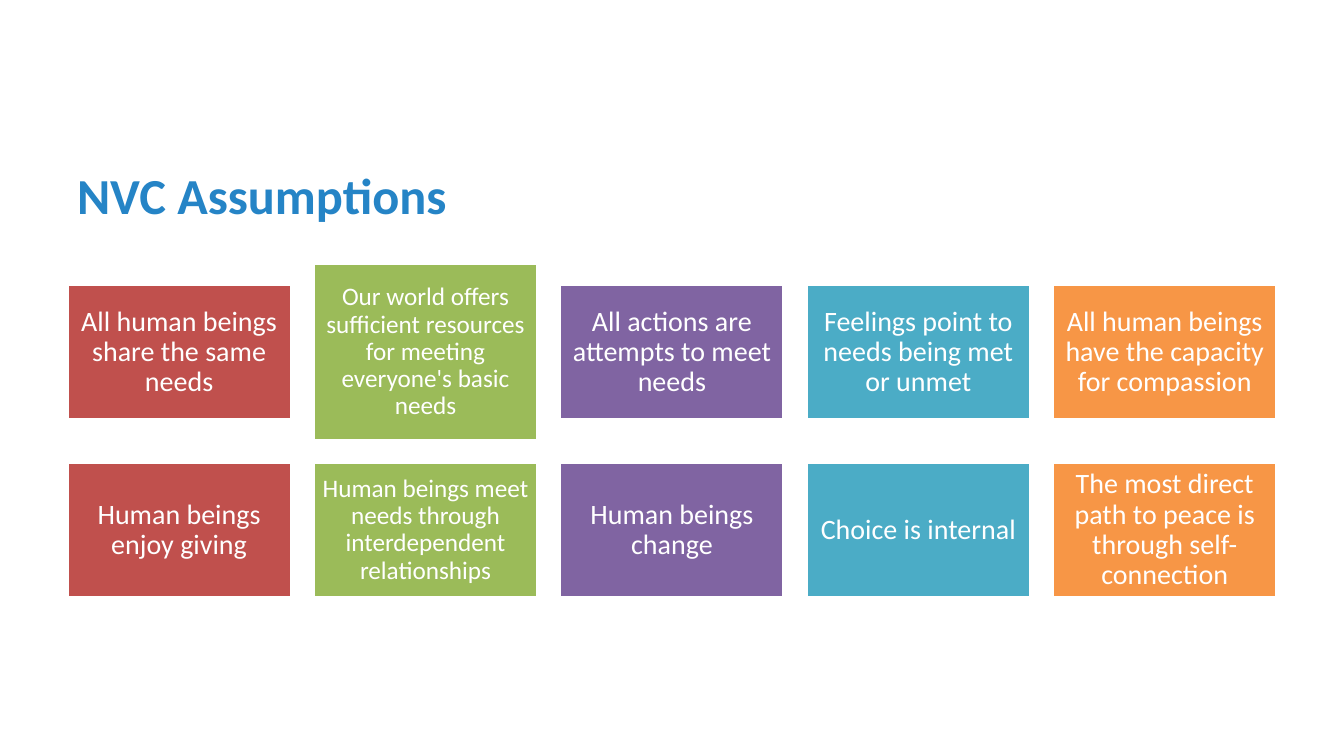
from typing import NamedTuple

from pptx import Presentation
from pptx.dml.color import RGBColor
from pptx.enum.shapes import MSO_SHAPE
from pptx.enum.text import MSO_ANCHOR, PP_ALIGN
from pptx.util import Pt

RECT = MSO_SHAPE.RECTANGLE
TOP, MIDDLE = MSO_ANCHOR.TOP, MSO_ANCHOR.MIDDLE
LEFT, CENTER = PP_ALIGN.LEFT, PP_ALIGN.CENTER

WHITE = RGBColor(0xFF, 0xFF, 0xFF)
BLUE = RGBColor(0x25, 0x84, 0xC6)
RED = RGBColor(0xC0, 0x50, 0x4D)
GREEN = RGBColor(0x9B, 0xBB, 0x59)
PURPLE = RGBColor(0x80, 0x64, 0xA2)
TEAL = RGBColor(0x4B, 0xAC, 0xC6)
ORANGE = RGBColor(0xF7, 0x96, 0x46)
COLUMN_COLORS = (RED, GREEN, PURPLE, TEAL, ORANGE)

# Grid, in points
MARGIN = 48
CARD_W, CARD_H = 160, 96
GAP = 16
ROW_CENTERS = (251.6, 378.6)


class Card(NamedTuple):
    text: str
    size: int = 20
    height: int = CARD_H


ROWS = (
    (
        Card("All human beings share the same needs"),
        Card("Our world offers sufficient resources for meeting everyone's basic needs", 18, 126),
        Card("All actions are attempts to meet needs"),
        Card("Feelings point to needs being met or unmet"),
        Card("All human beings have the capacity for compassion"),
    ),
    (
        Card("Human beings enjoy giving"),
        Card("Human beings meet needs through interdependent relationships", 18),
        Card("Human beings change"),
        Card("Choice is internal"),
        Card("The most direct path to peace is through self-connection"),
    ),
)


def write(sp, text: str, size: int, color: RGBColor, bold: bool, anchor, align) -> None:
    tf = sp.text_frame
    tf.word_wrap = True
    tf.vertical_anchor = anchor
    p = tf.paragraphs[0]
    p.alignment = align
    r = p.add_run()
    r.text = text
    r.font.color.rgb = color
    for name, value in {"name": "Calibri", "size": Pt(size), "bold": bold}.items():
        setattr(r.font, name, value)


def add_card(s, card: Card, left: float, center: float, fill: RGBColor) -> None:
    sp = s.shapes.add_shape(RECT, Pt(left), Pt(center - card.height / 2),
                            Pt(CARD_W), Pt(card.height))
    sp.shadow.inherit = False
    sp.fill.solid()
    sp.fill.fore_color.rgb = fill
    sp.line.color.rgb = WHITE
    sp.line.width = Pt(2)
    write(sp, card.text, card.size, WHITE, False, MIDDLE, CENTER)
    for side in ("left", "top", "right", "bottom"):
        setattr(sp.text_frame, f"margin_{side}", Pt(card.size * 0.3))
    sp.text_frame.paragraphs[0].line_spacing = 0.9


def main() -> None:
    prs = Presentation()
    prs.slide_width, prs.slide_height = Pt(960), Pt(540)
    s = prs.slides.add_slide(prs.slide_layouts[6])

    # Title
    title = s.shapes.add_textbox(Pt(MARGIN), Pt(114), Pt(864), Pt(35))
    write(title, "NVC Assumptions", 36, BLUE, True, TOP, LEFT)

    # Assumption cards
    for center, row in zip(ROW_CENTERS, ROWS):
        for i, (card, fill) in enumerate(zip(row, COLUMN_COLORS)):
            add_card(s, card, MARGIN + i * (CARD_W + GAP), center, fill)

    prs.save("out.pptx")


if __name__ == "__main__":
    main()
